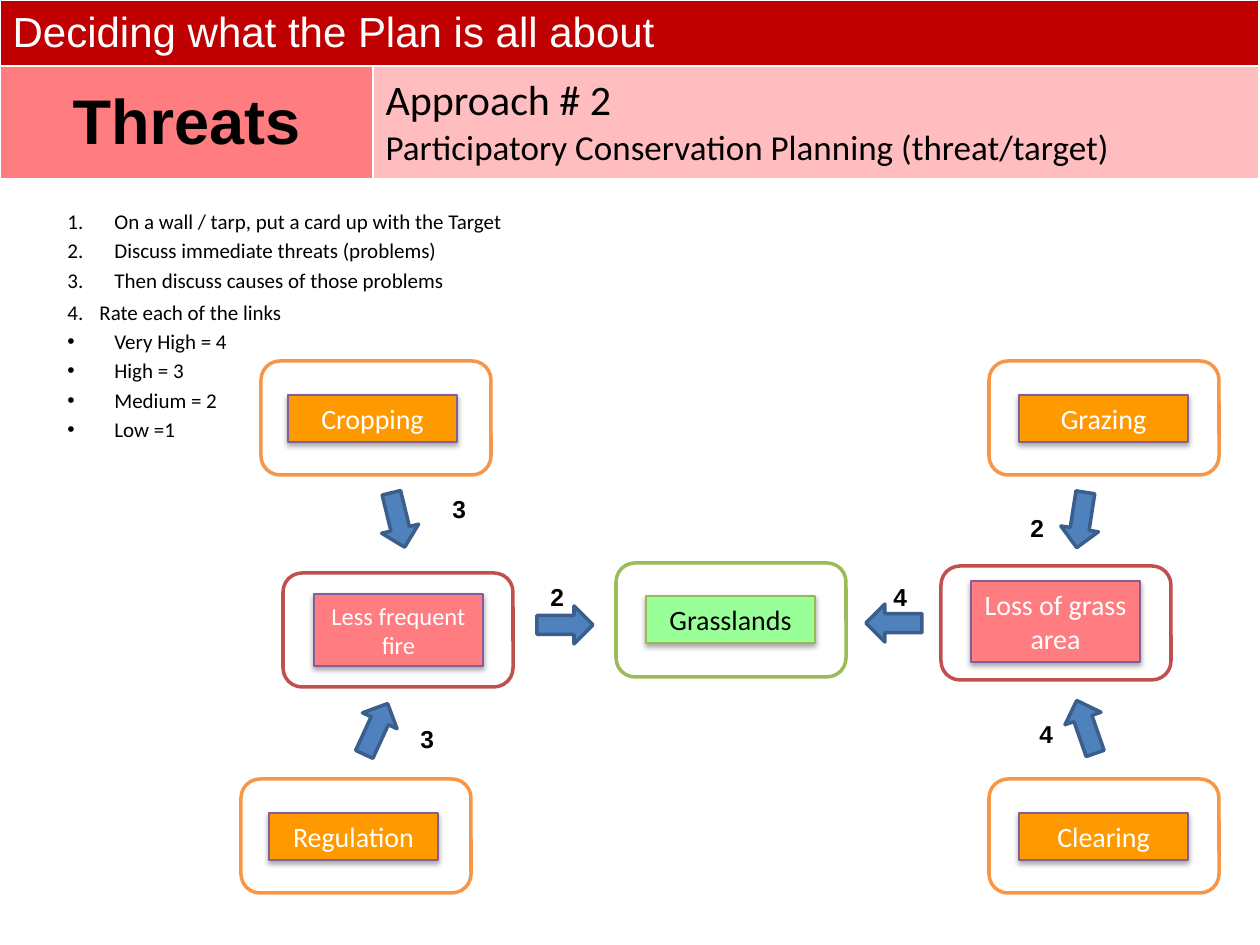
import pptx
import pptx.dml.color
import pptx.enum.shapes
import pptx.enum.text
import pptx.oxml
import pptx.oxml.ns
import pptx.util

EMU_PER_PX = 914400 / 126
SHAPE = pptx.enum.shapes.MSO_SHAPE
ALIGN = pptx.enum.text.PP_ALIGN
MIDDLE = pptx.enum.text.MSO_ANCHOR.MIDDLE
NAMESPACE = pptx.oxml.ns.nsdecls("a")
CAUSE = ("F79646", "FF9900", "7D60A0", "FFFFFF")
THREAT = ("C0504D", "FF7C80", "7D60A0", "FFFFFF")
TARGET = ("9BBB59", "99FF99", "98B955", "000000")
NUMBER, BULLET = "number", "bullet"


def px(length):
    return round(length * EMU_PER_PX)


def color(value):
    return pptx.dml.color.RGBColor.from_string(value)


def element(xml):
    """Parse one drawing element, given without its namespace declaration."""
    return pptx.oxml.parse_xml(xml.replace(">", f" {NAMESPACE}>", 1)
                               if "/>" not in xml.split(">", 1)[0] + ">"
                               else xml.replace("/>", f" {NAMESPACE}/>", 1))


def format_text(paragraph, size, name, ink, bold=False):
    for run in paragraph.runs:
        run.font.size = pptx.util.Pt(size)
        run.font.name = name
        run.font.bold = bold
        run.font.color.rgb = color(ink)


def add_shape(slide, kind, box, fill, line=None, width=2):
    shape = slide.shapes.add_shape(kind, *map(px, box))
    shape.shadow.inherit = False
    shape.fill.solid()
    shape.fill.fore_color.rgb = color(fill)
    if line:
        shape.line.color.rgb = color(line)
        shape.line.width = pptx.util.Pt(width)
    else:
        shape.line.fill.background()
    return shape


def add_soft_shadow(shape):
    effects = shape._element.spPr.find(pptx.oxml.ns.qn("a:effectLst"))
    effects.append(element(
        '<a:outerShdw blurRad="40000" dist="23000" dir="5400000" rotWithShape="0">'
        '<a:srgbClr val="000000"><a:alpha val="35000"/></a:srgbClr></a:outerShdw>'))


def add_card(slide, text, style, frame, label, size=16):
    """Draw a rounded frame at (left, top) with a label at (left, top, height)."""
    outline, fill, edge, ink = style
    add_shape(slide, SHAPE.ROUNDED_RECTANGLE, (*frame, 230, 114), "FFFFFF", outline)
    left, top, height = label
    shape = add_shape(slide, SHAPE.RECTANGLE, (left, top, 169, height), fill, edge, 0.75)
    add_soft_shadow(shape)
    shape.text_frame.text = text
    shape.text_frame.word_wrap = True
    shape.text_frame.vertical_anchor = MIDDLE
    paragraph = shape.text_frame.paragraphs[0]
    paragraph.alignment = ALIGN.CENTER
    format_text(paragraph, size, "Calibri", ink)


def add_rating(slide, text, left, top):
    shape = add_shape(slide, SHAPE.RECTANGLE, (left, top, 38, 38), "FFFFFF")
    shape.text_frame.text = text
    shape.text_frame.vertical_anchor = pptx.enum.text.MSO_ANCHOR.TOP
    paragraph = shape.text_frame.paragraphs[0]
    paragraph.alignment = ALIGN.LEFT
    format_text(paragraph, 14, "Arial", "000000", bold=True)


def add_link_arrow(slide, left, top, rotation):
    arrow = add_shape(slide, SHAPE.RIGHT_ARROW, (left, top, 56, 38), "4F81BD", "3A5F8C")
    arrow.rotation = rotation


def add_list(slide, box, items):
    """Items are (text, marker, first number, hanging indent)."""
    frame = slide.shapes.add_textbox(*map(px, box)).text_frame
    frame.word_wrap = True
    frame.text = "\n".join(item[0] for item in items)
    for index, (paragraph, item) in enumerate(zip(frame.paragraphs, items)):
        _, marker, start, indent = item
        properties = paragraph._p.get_or_add_pPr()
        properties.set("marL", str(px(indent)))
        properties.set("indent", str(-px(indent)))
        if marker == NUMBER:
            properties.append(element(
                f'<a:buAutoNum type="arabicPeriod" startAt="{start}"/>'))
        else:
            properties.append(element('<a:buFont typeface="Arial"/>'))
            properties.append(element('<a:buChar char="•"/>'))
        if index:
            paragraph.space_before = pptx.util.Pt(2.4)
        format_text(paragraph, 12, "Calibri", "000000")


def format_cell(cell, lines, fill, ink, alignment=ALIGN.LEFT, opacity=100):
    """Lines are (text, size, font, bold)."""
    cell.vertical_anchor = MIDDLE
    cell.text_frame.text = "\n".join(line[0] for line in lines)
    for paragraph, (_, size, name, bold) in zip(cell.text_frame.paragraphs, lines):
        paragraph.alignment = alignment
        format_text(paragraph, size, name, ink, bold)
    cell.fill.solid()
    cell.fill.fore_color.rgb = color(fill)
    properties = cell._tc.get_or_add_tcPr()
    if opacity < 100:
        tint = properties.find(".//" + pptx.oxml.ns.qn("a:srgbClr"))
        tint.append(element(f'<a:alpha val="{opacity * 1000}"/>'))
    for index, side in enumerate("LRTB"):
        properties.insert(index, element(
            f'<a:ln{side} w="12700"><a:solidFill><a:srgbClr val="FFFFFF"/>'
            f'</a:solidFill></a:ln{side}>'))


def add_heading_table(slide):
    table = slide.shapes.add_table(2, 2, 0, 0, px(1259), px(179)).table
    table.first_row = table.horz_banding = False
    for column, width in zip(table.columns, (373, 886)):
        column.width = px(width)
    for row, height in zip(table.rows, (66, 113)):
        row.height = px(height)
    table.cell(0, 0).merge(table.cell(0, 1))
    format_cell(table.cell(0, 0),
                [("Deciding what the Plan is all about", 24, "Arial", False)],
                "C00000", "FFFFFF")
    format_cell(table.cell(1, 0), [("Threats", 36, "Arial", True)],
                "FF7C80", "000000", ALIGN.CENTER)
    format_cell(table.cell(1, 1), [
        ("Approach # 2", 24, "Calibri", False),
        ("Participatory Conservation Planning (threat/target)", 20, "Calibri", False),
    ], "FF7C80", "000000", opacity=50)


def main():
    presentation = pptx.Presentation()
    presentation.slide_width, presentation.slide_height = px(1260), px(945)
    slide = presentation.slides.add_slide(presentation.slide_layouts[6])

    steps = ("On a wall / tarp, put a card up with the Target",
             "Discuss immediate threats (problems)",
             "Then discuss causes of those problems")
    add_list(slide, (55, 202, 474, 110), [(step, NUMBER, 1, 47) for step in steps])
    add_heading_table(slide)

    for text, left, top in (("4", 881, 576), ("2", 1018, 507), ("3", 440, 488),
                            ("2", 538, 576), ("4", 1027, 713), ("3", 408, 718)):
        add_rating(slide, text, left, top)

    add_card(slide, "Grasslands", TARGET, (616, 563), (646, 596, 47))
    add_card(slide, "Less frequent fire", THREAT, (283, 573), (314, 594, 72), 14)
    add_card(slide, "Loss of grass area", THREAT, (941, 566), (971, 581, 81))
    add_card(slide, "Grazing", CAUSE, (989, 361), (1019, 395, 47))
    add_card(slide, "Clearing", CAUSE, (989, 779), (1019, 813, 47))
    add_card(slide, "Cropping", CAUSE, (261, 361), (288, 395, 47))
    add_card(slide, "Regulation", CAUSE, (241, 779), (269, 813, 47))

    ratings = ("Very High = 4", "High = 3", "Medium = 2", "Low =1")
    add_list(slide, (55, 293, 256, 176),
             [("Rate each of the links", NUMBER, 4, 32)]
             + [(rating, BULLET, None, 47) for rating in ratings])

    for left, top, rotation in ((1053, 501, 98.9), (1058, 708, 250.8), (866, 604, 180),
                                (537, 606, 0), (348, 710, 294.7), (370, 501, 76.2)):
        add_link_arrow(slide, left, top, rotation)

    presentation.save("out.pptx")


if __name__ == "__main__":
    main()
